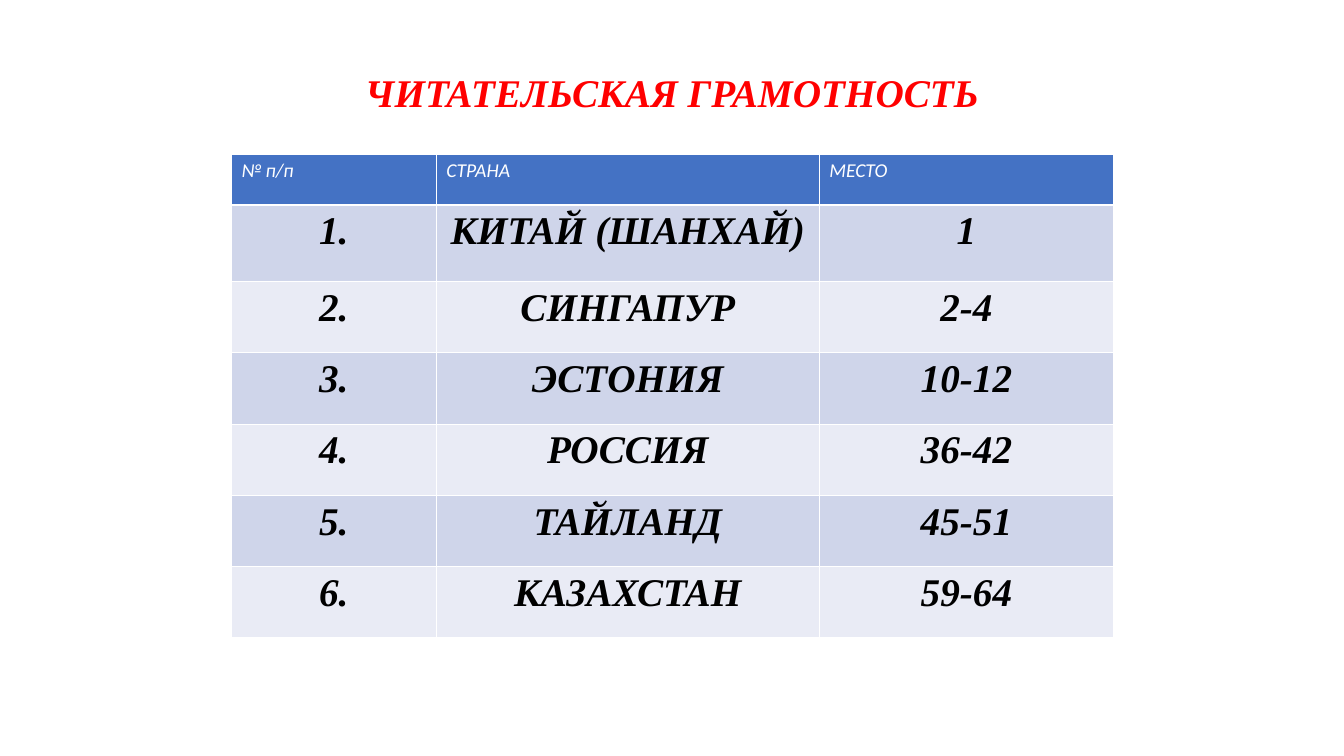
from lxml.etree import SubElement
from pptx import Presentation
from pptx.dml.color import RGBColor
from pptx.enum.text import MSO_ANCHOR as Anchor, MSO_AUTO_SIZE as AutoSize, PP_ALIGN as Align
from pptx.oxml.ns import qn
from pptx.util import Cm, Pt

COLORS = {
    "title": "FF0000",
    "header": "4472C4",
    "odd_row": "CFD5EA",
    "even_row": "E9EBF5",
    "white": "FFFFFF",
    "black": "000000",
}
HEADINGS = ("№ п/п", "СТРАНА", "МЕСТО")
RANKING = (
    ("КИТАЙ (ШАНХАЙ)", "1"),
    ("СИНГАПУР", "2-4"),
    ("ЭСТОНИЯ", "10-12"),
    ("РОССИЯ", "36-42"),
    ("ТАЙЛАНД", "45-51"),
    ("КАЗАХСТАН", "59-64"),
)
COLUMN_WIDTHS = (7.75, 14.48, 11.12)
ROW_HEIGHTS = (1.93, 2.9) + (2.69,) * 5


def write_text(text_frame, text, font_name, size, color, bold, align):
    """Fill a text frame with one italic paragraph."""
    text_frame.text = text
    paragraph = text_frame.paragraphs[0]
    paragraph.alignment = align
    font = paragraph.runs[0].font
    font.name = font_name
    font.size = Pt(size)
    font.bold = bold
    font.italic = True
    font.color.rgb = RGBColor.from_string(COLORS[color])


def add_title(slide, text):
    """Place and format the title placeholder."""
    title = slide.shapes.title
    title.left, title.top, title.width, title.height = Cm(9.63), Cm(2.39), Cm(31.55), Cm(2.95)
    text_frame = title.text_frame
    write_text(text_frame, text, "Times New Roman", 42, "title", True, Align.CENTER)
    text_frame.word_wrap = True
    text_frame.vertical_anchor = Anchor.TOP
    text_frame.auto_size = AutoSize.SHAPE_TO_FIT_TEXT
    text_frame.margin_left = text_frame.margin_right = Cm(0.38)
    text_frame.margin_top = text_frame.margin_bottom = Cm(0.19)


def add_borders(cell, bottom_width):
    """Draw white lines on the four sides of a cell."""
    properties = cell._tc.get_or_add_tcPr()
    for side, width in (("L", 1), ("R", 1), ("T", 1), ("B", bottom_width)):
        line = SubElement(properties, qn(f"a:ln{side}"), w=str(Pt(width)))
        fill = SubElement(line, qn("a:solidFill"))
        SubElement(fill, qn("a:srgbClr"), val=COLORS["white"])


def format_cell(cell, text, is_header, fill_color):
    """Write one table cell with its borders, fill and margins."""
    if is_header:
        write_text(cell.text_frame, text, "Calibri", 21, "white", False, Align.LEFT)
    else:
        write_text(cell.text_frame, text, "Times New Roman", 42, "black", True, Align.CENTER)
    cell.margin_left = cell.margin_right = Cm(0.38)
    cell.margin_top = cell.margin_bottom = Cm(0.19)
    add_borders(cell, 3 if is_header else 1)
    cell.fill.solid()
    cell.fill.fore_color.rgb = RGBColor.from_string(COLORS[fill_color])


def add_ranking_table(slide):
    """Build the numbered table of countries and places."""
    rows = [HEADINGS] + [(f"{number}.", *entry) for number, entry in enumerate(RANKING, 1)]
    table = slide.shapes.add_table(
        len(rows), len(HEADINGS), Cm(8.74), Cm(5.82),
        Cm(sum(COLUMN_WIDTHS)), Cm(sum(ROW_HEIGHTS)),
    ).table
    for column, width in zip(table.columns, COLUMN_WIDTHS):
        column.width = Cm(width)
    for row_index, (texts, height) in enumerate(zip(rows, ROW_HEIGHTS)):
        table.rows[row_index].height = Cm(height)
        is_header = row_index == 0
        band = "odd_row" if row_index % 2 else "even_row"
        for column_index, text in enumerate(texts):
            cell = table.cell(row_index, column_index)
            format_cell(cell, text, is_header, "header" if is_header else band)


def main():
    """Create the slide and save the presentation."""
    presentation = Presentation()
    presentation.slide_width, presentation.slide_height = Cm(50.8), Cm(28.58)
    slide = presentation.slides.add_slide(presentation.slide_layouts[5])
    add_ranking_table(slide)
    add_title(slide, "ЧИТАТЕЛЬСКАЯ ГРАМОТНОСТЬ")
    presentation.save("out.pptx")


if __name__ == "__main__":
    main()
